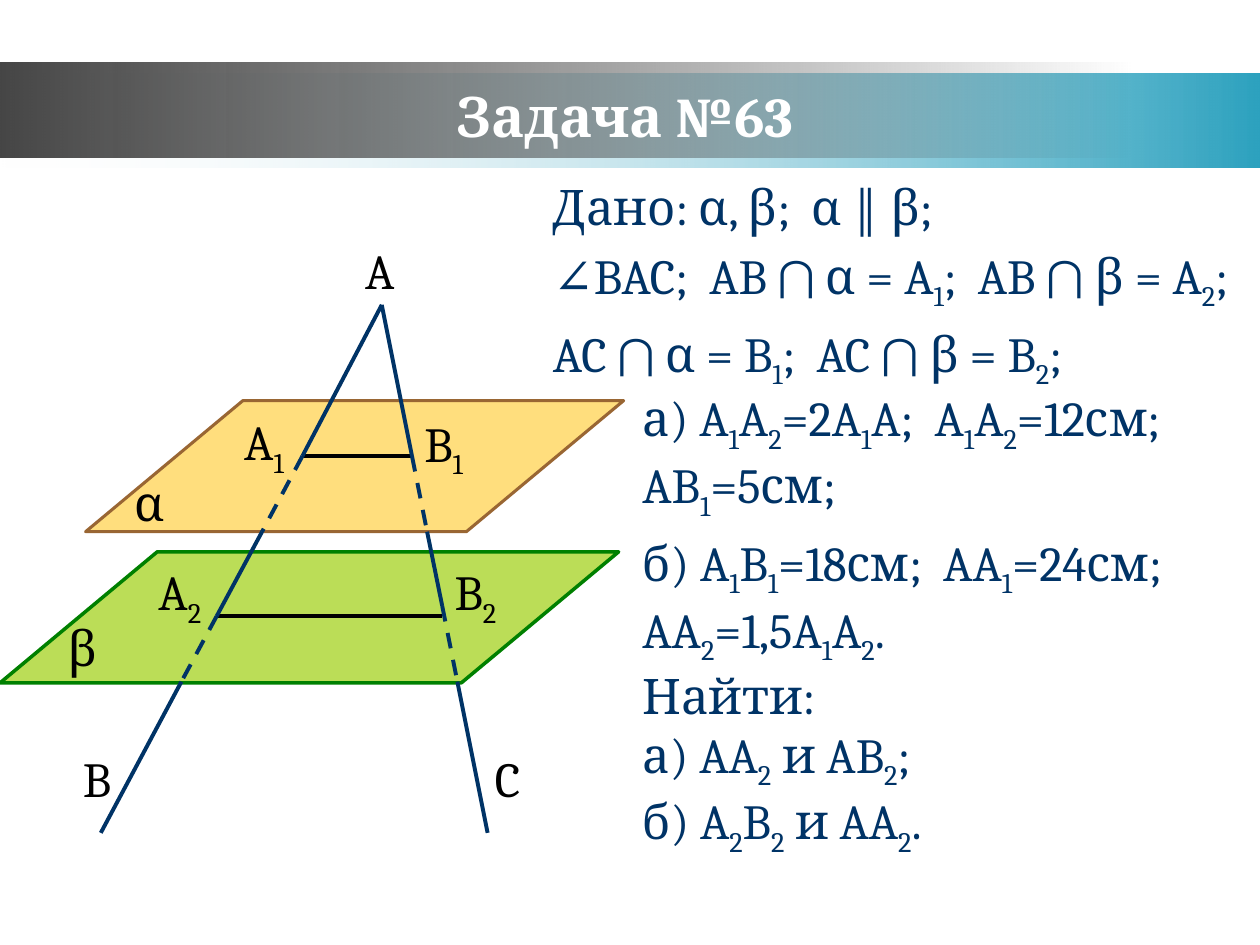
from dataclasses import dataclass
from itertools import groupby, pairwise

from lxml import etree
from pptx import Presentation
from pptx.dml.color import RGBColor
from pptx.enum.dml import MSO_LINE
from pptx.enum.shapes import MSO_CONNECTOR, MSO_SHAPE
from pptx.enum.text import MSO_ANCHOR, PP_ALIGN
from pptx.oxml.ns import qn
from pptx.util import Inches, Pt

RECTANGLE = MSO_SHAPE.RECTANGLE
PARALLELOGRAM = MSO_SHAPE.PARALLELOGRAM
STRAIGHT = MSO_CONNECTOR.STRAIGHT
DASH = MSO_LINE.DASH
MIDDLE = MSO_ANCHOR.MIDDLE
TOP = MSO_ANCHOR.TOP
CENTER = PP_ALIGN.CENTER
LANGUAGES = {"plain": "ru-RU", "lowered": "ru-RU", "greek": "el-GR", "symbol": "en-US"}


@dataclass(frozen=True)
class Theme:
    """Colours, font and sizes of the slide."""
    font: str = "Cambria"
    title_size: int = 32
    text_size: int = 28
    line_width: float = 2.25
    white: str = "FFFFFF"
    black: str = "000000"
    navy: str = "003366"
    teal: tuple = (("F1F6F8", 0), ("2DA2BF", 100))
    gray: tuple = (("464646", 100), ("323232", 0))
    alpha_plane: tuple = ("FFC000", 51, "996633", 1.75)
    beta_plane: tuple = ("99CC00", 66, "008000", 2)


@dataclass(frozen=True)
class Box:
    """A rectangle on the slide, in inches."""
    left: float
    top: float
    width: float
    height: float

    def inside(self, left, top, width, height):
        """Return a box placed relative to this one."""
        return Box(self.left + left, self.top + top, width, height)

    def lengths(self):
        """Return the four sides as slide lengths."""
        return [Inches(side) for side in (self.left, self.top, self.width, self.height)]


THEME = Theme()


def set_opacity(color_element, percent):
    """Give a colour element its opacity."""
    etree.SubElement(color_element, qn("a:alpha")).set("val", str(percent * 1000))


def character_kind(previous, character):
    """Tell how a character is set, given the one before it."""
    if previous == "_":
        return "lowered"
    if character in "αβ":
        return "greek"
    return "symbol" if character in "∠⋂‖" else "plain"


def add_runs(paragraph, line):
    """Add one run for each stretch of characters of one kind."""
    kinds = [(character_kind(previous, character), character)
             for previous, character in pairwise(" " + line) if character != "_"]
    for kind, group in groupby(kinds, key=lambda pair: pair[0]):
        run = paragraph.add_run()
        run.text = "".join(character for _, character in group)
        properties = run.font._element
        properties.set("lang", LANGUAGES[kind])
        if kind == "lowered":
            properties.set("baseline", "-25000")
        if kind in ("greek", "symbol"):
            for tag in ("a:latin", "a:ea", "a:cs"):
                etree.SubElement(properties, qn(tag)).set("typeface", THEME.font)


def add_text(slide, box, lines, color, size=THEME.text_size, bold=False, before=0,
             after=0, anchor=TOP, alignment=None, wrap=True):
    """Add text in which an underscore lowers the next character."""
    frame = slide.shapes.add_textbox(*box.lengths()).text_frame
    frame.word_wrap = wrap
    frame.vertical_anchor = anchor
    for index, line in enumerate(lines):
        paragraph = frame.add_paragraph() if index else frame.paragraphs[0]
        paragraph.alignment = alignment
        paragraph.space_before, paragraph.space_after = Pt(before), Pt(after)
        paragraph.font.name, paragraph.font.size = THEME.font, Pt(size)
        paragraph.font.bold = bold
        paragraph.font.color.rgb = RGBColor.from_string(color)
        add_runs(paragraph, line)


def add_band(slide, box, stops):
    """Add a horizontal gradient band."""
    band = slide.shapes.add_shape(RECTANGLE, *box.lengths())
    band.shadow.inherit = False
    band.line.fill.background()
    band.fill.gradient()
    band.fill.gradient_angle = 0
    for stop, (color, opacity) in zip(band.fill.gradient_stops, stops):
        stop.color.rgb = RGBColor.from_string(color)
        set_opacity(stop._gs[0], opacity)


def add_header(slide, box, title):
    """Add the two bands and the title."""
    add_band(slide, box.inside(0, 0.08, 10, 0.75), THEME.teal)
    add_band(slide, box.inside(0, 0, 9, 0.75), THEME.gray)
    add_text(slide, box.inside(0.92, 0.1, 8.08, 0.62), [title], THEME.white,
             THEME.title_size, bold=True, anchor=MIDDLE, alignment=CENTER)


def add_plane(slide, box, style):
    """Add a translucent plane."""
    fill, opacity, outline, width = style
    plane = slide.shapes.add_shape(PARALLELOGRAM, *box.lengths())
    plane.adjustments[0] = 1.2
    plane.shadow.inherit = False
    plane.fill.solid()
    plane.fill.fore_color.rgb = RGBColor.from_string(fill)
    set_opacity(plane.fill._xPr.find(qn("a:solidFill"))[0], opacity)
    plane.line.color.rgb = RGBColor.from_string(outline)
    plane.line.width = Pt(width)


def add_segment(slide, box, start, end, color, dashed=False):
    """Add a straight segment between two points of the box."""
    ends = [Inches(origin + offset) for point in (start, end)
            for origin, offset in zip((box.left, box.top), point)]
    segment = slide.shapes.add_connector(STRAIGHT, *ends)
    segment.line.color.rgb = RGBColor.from_string(color)
    segment.line.width = Pt(THEME.line_width)
    if dashed:
        segment.line.dash_style = DASH
    etree.SubElement(segment._element.spPr, qn("a:effectLst"))


def add_figure(slide, box):
    """Draw the angle that crosses two parallel planes."""
    add_plane(slide, box.inside(0.68, 1.38, 4.27, 1.04), THEME.alpha_plane)
    add_plane(slide, box.inside(0, 2.58, 4.91, 1.04), THEME.beta_plane)
    apex = (3.03, 0.62)
    left_ray = [apex, (2.4, 1.82), (2.08, 2.42), (1.72, 3.09), (1.44, 3.61), (0.8, 4.81)]
    right_ray = [apex, (3.27, 1.82), (3.39, 2.42), (3.51, 3.01), (3.63, 3.61), (3.87, 4.81)]
    for left, right in (((2.4, 1.82), (3.27, 1.82)), ((1.72, 3.09), (3.51, 3.09))):
        add_segment(slide, box, left, right, THEME.black)
    labels = [("α", 0.97, 1.9), ("β", 0.44, 3.05), ("A", 2.8, 0.06), ("B", 0.56, 4.09),
              ("C", 3.83, 4.09), ("A_1", 1.84, 1.42), ("A_2", 1.16, 2.61),
              ("B_1", 3.27, 1.43), ("B_2", 3.51, 2.61)]
    for text, left, top in labels:
        width = 0.6 if "_" in text else 0.43
        add_text(slide, box.inside(left, top, width, 0.57), [text], THEME.black, wrap=False)
    for ray in (left_ray, right_ray):
        for index, (start, end) in enumerate(pairwise(ray)):
            add_segment(slide, box, start, end, THEME.navy, dashed=index % 2 == 1)


def add_problem(slide, box):
    """Write what is given and what is to be found."""
    add_text(slide, box.inside(0, 0, 5.71, 1.68),
             ["Дано: α, β;  α ‖ β;",
              "∠BAC;  AB ⋂ α = A_1;  AB ⋂ β = A_2;",
              "AC ⋂ α = B_1;  AC ⋂ β = B_2;"], THEME.navy, before=6)
    add_text(slide, box.inside(0.71, 1.68, 4.79, 2.07),
             ["а) A_1A_2=2A_1A;  A_1A_2=12см; AB_1=5см;",
              "б) A_1B_1=18см;  AA_1=24см; AA_2=1,5A_1A_2."], THEME.navy, after=6)
    add_text(slide, box.inside(0.71, 3.88, 2.72, 1.51),
             ["Найти:", "а) AA_2 и AB_2;", "б) A_2B_2 и AA_2."], THEME.navy)


def main():
    """Build and save the slide."""
    presentation = Presentation()
    presentation.slide_width, presentation.slide_height = Inches(10), Inches(7.5)
    slide = presentation.slides.add_slide(presentation.slide_layouts[6])
    add_header(slide, Box(0, 0.5, 10, 0.83), "Задача №63")
    add_problem(slide, Box(4.29, 1.35, 5.71, 5.39))
    add_figure(slide, Box(0, 1.8, 4.95, 4.81))
    presentation.save("out.pptx")


if __name__ == "__main__":
    main()
